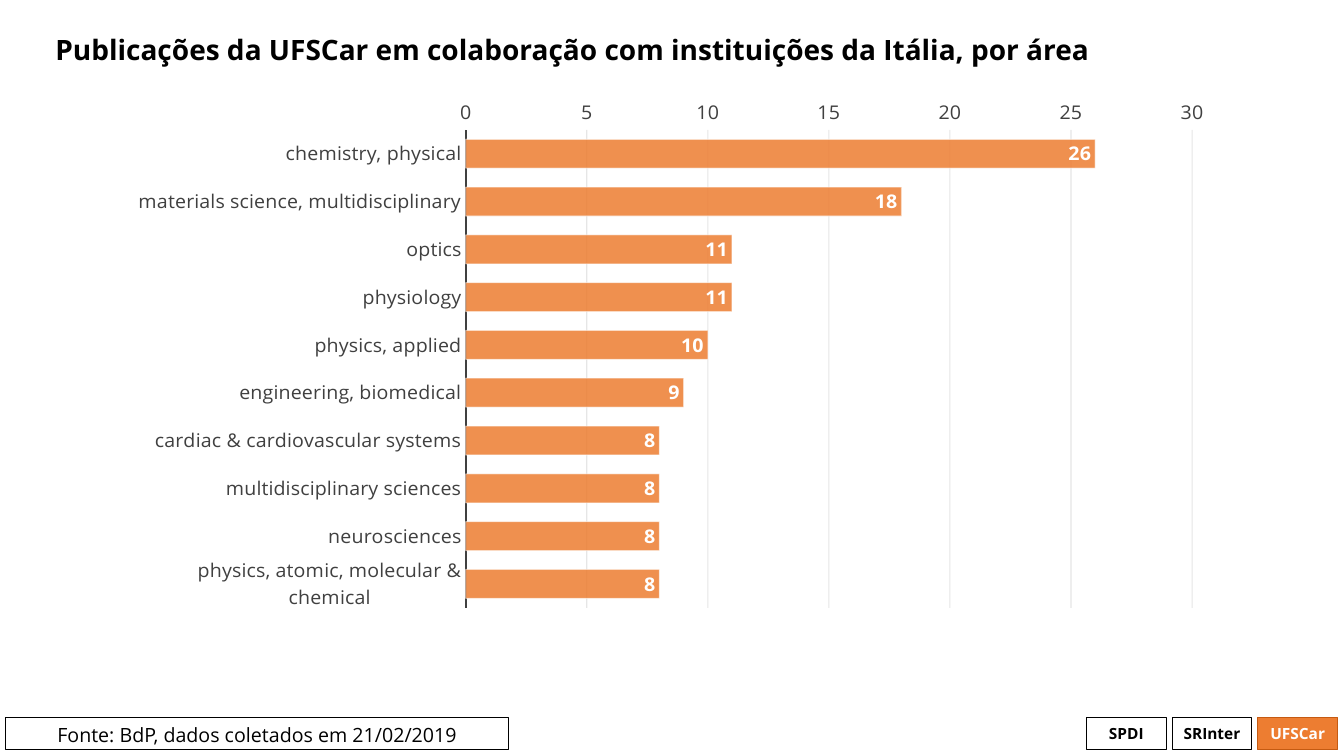
from lxml import etree
from pptx import Presentation
from pptx.chart.data import CategoryChartData
from pptx.dml.color import RGBColor
from pptx.enum.chart import XL_AXIS_CROSSES, XL_CHART_TYPE, XL_LABEL_POSITION, XL_TICK_MARK
from pptx.enum.shapes import MSO_SHAPE
from pptx.enum.text import MSO_ANCHOR, MSO_AUTO_SIZE, PP_ALIGN
from pptx.oxml.ns import qn
from pptx.util import Cm, Pt

FONT = "Open Sans"
BLACK = RGBColor(0x00, 0x00, 0x00)
WHITE = RGBColor(0xFF, 0xFF, 0xFF)
ORANGE = RGBColor(0xED, 0x7D, 0x31)
DARK_ORANGE = RGBColor(0xC5, 0x5A, 0x11)
GREY = RGBColor(0x40, 0x40, 0x40)
GRID = RGBColor(0x0D, 0x0D, 0x0D)

RECTANGLE = MSO_SHAPE.RECTANGLE
BAR_CLUSTERED = XL_CHART_TYPE.BAR_CLUSTERED
INSIDE_END = XL_LABEL_POSITION.INSIDE_END
CROSSES_MAXIMUM = XL_AXIS_CROSSES.MAXIMUM
NO_TICK = XL_TICK_MARK.NONE
TOP, MIDDLE = MSO_ANCHOR.TOP, MSO_ANCHOR.MIDDLE
LEFT, CENTER = PP_ALIGN.LEFT, PP_ALIGN.CENTER
NO_AUTOFIT = MSO_AUTO_SIZE.NONE

PUBLICATIONS = {
    "chemistry, physical": 26,
    "materials science, multidisciplinary": 18,
    "optics": 11,
    "physiology": 11,
    "physics, applied": 10,
    "engineering, biomedical": 9,
    "cardiac & cardiovascular systems": 8,
    "multidisciplinary sciences": 8,
    "neurosciences": 8,
    "physics, atomic, molecular & chemical": 8,
}
BADGES = [
    ("SPDI", None, BLACK, BLACK),
    ("SRInter", None, BLACK, BLACK),
    ("UFSCar", ORANGE, DARK_ORANGE, WHITE),
]
FOOTER_TOP, FOOTER_HEIGHT = 18.08, 0.81
BADGE_LEFT, BADGE_STEP, BADGE_WIDTH = 27.38, 2.16, 2.01


def format_font(font, size=14, color=BLACK, bold=False):
    font.name = FONT
    font.size = Pt(size)
    font.bold = bold
    font.color.rgb = color


def write_text(shape, text, align=CENTER, anchor=MIDDLE, spacing=1.0, **font_format):
    frame = shape.text_frame
    frame.word_wrap = True
    frame.auto_size = NO_AUTOFIT
    frame.vertical_anchor = anchor
    paragraph = frame.paragraphs[0]
    paragraph.alignment = align
    paragraph.line_spacing = spacing
    run = paragraph.add_run()
    run.text = text
    format_font(run.font, **font_format)


def place(shape, left, top, width, height):
    shape.left, shape.top = Cm(left), Cm(top)
    shape.width, shape.height = Cm(width), Cm(height)


def add_footer_box(slide, left, width, text, fill=None, line=BLACK, **text_format):
    box = slide.shapes.add_shape(
        RECTANGLE, Cm(left), Cm(FOOTER_TOP), Cm(width), Cm(FOOTER_HEIGHT))
    box.shadow.inherit = False
    if fill is None:
        box.fill.background()
    else:
        box.fill.solid()
        box.fill.fore_color.rgb = fill
    box.line.color.rgb = line
    box.line.width = Pt(0.75)
    box.text_frame.margin_left = box.text_frame.margin_right = Cm(0.1)
    write_text(box, text, **text_format)


def format_line(line, color, width):
    line.color.rgb = color
    line.width = Pt(width)


def set_opacity(element, color_query, percent):
    for color in element.xpath(color_query):
        etree.SubElement(color, qn("a:alpha")).set("val", str(percent * 1000))


def set_plot_layout(chart, **fractions):
    plot_area = chart.plots[0]._element.getparent()
    for old_layout in plot_area.findall(qn("c:layout")):
        plot_area.remove(old_layout)
    layout = etree.Element(qn("c:layout"))
    manual = etree.SubElement(layout, qn("c:manualLayout"))
    settings = {"layoutTarget": "inner", "xMode": "edge", "yMode": "edge", **fractions}
    for name, value in settings.items():
        etree.SubElement(manual, qn(f"c:{name}")).set("val", str(value))
    plot_area.insert(0, layout)


def format_axes(chart):
    category_axis, value_axis = chart.category_axis, chart.value_axis
    for axis in (category_axis, value_axis):
        axis.major_tick_mark = axis.minor_tick_mark = NO_TICK
        format_font(axis.tick_labels.font, color=GREY)
    category_axis.reverse_order = True
    category_axis.crosses = CROSSES_MAXIMUM
    format_line(category_axis.format.line, GREY, 1.5)
    value_axis.minimum_scale, value_axis.maximum_scale = 0, 30
    value_axis.major_unit = 5
    value_axis.format.line.fill.background()
    format_line(value_axis.major_gridlines.format.line, GRID, 0.75)
    set_opacity(value_axis._element, "c:majorGridlines//a:srgbClr", 10)


def format_bars(plot):
    plot.gap_width = 65
    plot.vary_by_categories = False
    series = plot.series[0]
    series.format.fill.solid()
    series.format.fill.fore_color.rgb = ORANGE
    format_line(series.format.line, WHITE, 0.75)
    set_opacity(series._element, "c:spPr/a:solidFill/a:srgbClr", 85)
    set_opacity(series._element, "c:spPr/a:ln//a:srgbClr", 50)
    labels = series.data_labels
    labels.show_value = True
    labels.position = INSIDE_END
    format_font(labels.font, color=WHITE, bold=True)


def add_publications_chart(slide):
    data = CategoryChartData()
    data.categories = list(PUBLICATIONS)
    data.add_series("Series 1", list(PUBLICATIONS.values()))
    chart = slide.shapes.add_chart(
        BAR_CLUSTERED, Cm(2.92), Cm(2.51), Cm(27.99), Cm(14), data).chart
    chart.has_legend = False
    chart.has_title = False
    format_font(chart.font)
    set_plot_layout(chart, x=0.315, y=0.022, w=0.654, h=0.89)
    format_axes(chart)
    format_bars(chart.plots[0])


def main():
    presentation = Presentation()
    presentation.slide_width, presentation.slide_height = Cm(33.87), Cm(19.05)
    slide = presentation.slides.add_slide(presentation.slide_layouts[5])

    for index, (name, fill, line, color) in enumerate(BADGES):
        add_footer_box(slide, BADGE_LEFT + index * BADGE_STEP, BADGE_WIDTH, name,
                       fill=fill, line=line, size=11, color=color, bold=True)
    add_footer_box(slide, 0.15, 12.67, "Fonte: BdP, dados coletados em 21/02/2019",
                   anchor=TOP)

    title = slide.shapes.title
    place(title, 1.14, 0.15, 31.52, 2.31)
    write_text(title, "Publicações da UFSCar em colaboração com instituições da Itália, por área",
               align=LEFT, spacing=0.9, size=20, bold=True)
    add_publications_chart(slide)
    presentation.save("out.pptx")


if __name__ == "__main__":
    main()
